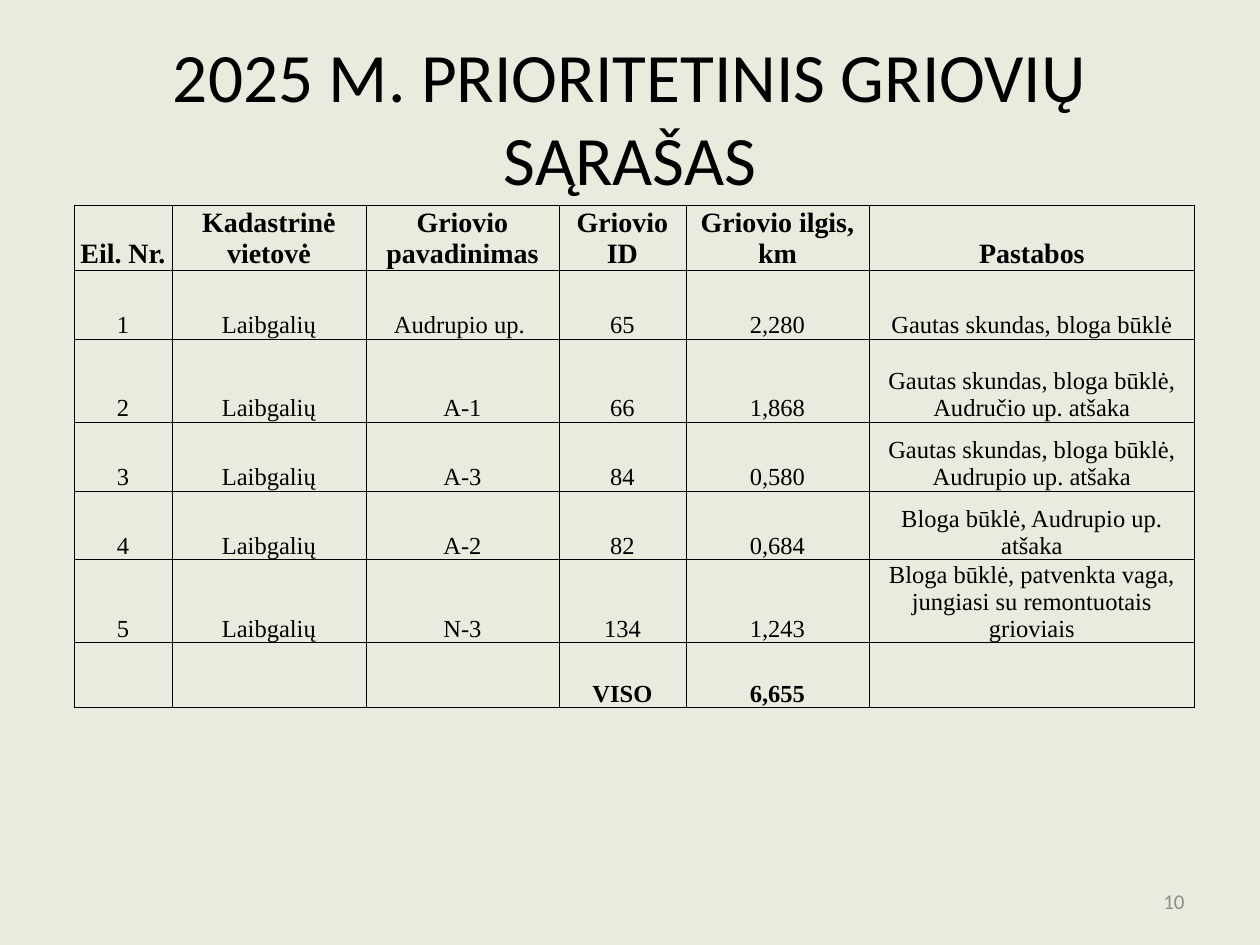
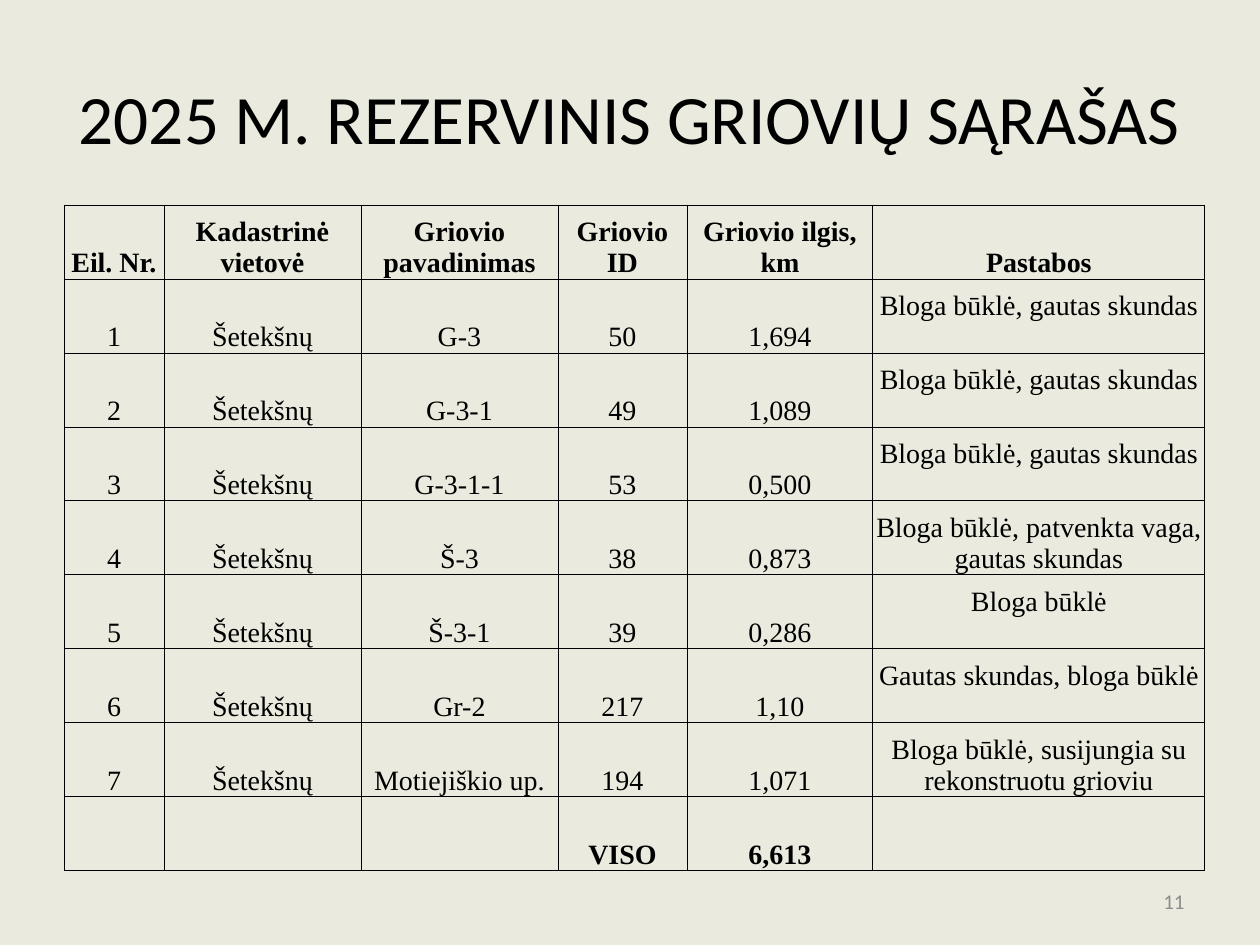
from lxml import etree
from pptx import Presentation
from pptx.dml.color import RGBColor
from pptx.enum.text import MSO_ANCHOR, PP_ALIGN
from pptx.oxml.ns import qn
from pptx.util import Pt

# Content
HEADERS = ["Eil. Nr.", "Kadastrinė vietovė", "Griovio pavadinimas",
           "Griovio ID", "Griovio ilgis, km", "Pastabos"]
COMPLAINT = "Bloga būklė, gautas skundas"
PAGES = [
    {
        "title": "2025 M. PRIORITETINIS GRIOVIŲ SĄRAŠAS",
        "number": "10",
        "place": "Laibgalių",
        "ditches": [  # name, ID, length, remarks
            ("Audrupio up. ", "65", "2,280", "Gautas skundas, bloga būklė"),
            ("A-1", "66", "1,868", "Gautas skundas, bloga būklė, Audručio up. atšaka"),
            ("A-3", "84", "0,580", "Gautas skundas, bloga būklė, Audrupio up. atšaka"),
            ("A-2", "82", "0,684", "Bloga būklė, Audrupio up. atšaka"),
            ("N-3", "134", "1,243",
             "Bloga būklė, patvenkta vaga, jungiasi su remontuotais grioviais"),
        ],
        "total": "6,655",
        "left": 74,
        "columns": [98, 194, 193, 127, 183, 326],
        "rows": [65, 69, 83, 69, 69, 83, 65],
        "body_size": 14,
        "raised_remarks": [],
    },
    {
        "title": "2025 M. REZERVINIS GRIOVIŲ SĄRAŠAS",
        "number": "11",
        "place": "Šetekšnų",
        "ditches": [
            ("G-3", "50", "1,694", COMPLAINT),
            ("G-3-1", "49", "1,089", COMPLAINT),
            ("G-3-1-1", "53", "0,500", COMPLAINT),
            ("Š-3", "38", "0,873", "Bloga būklė, patvenkta vaga, gautas skundas"),
            ("Š-3-1", "39", "0,286", "Bloga būklė"),
            ("Gr-2", "217", "1,10", "Gautas skundas, bloga būklė"),
            ("Motiejiškio up.", "194", "1,071",
             "Bloga būklė, susijungia su rekonstruotu grioviu"),
        ],
        "total": "6,613",
        "left": 64,
        "columns": [100, 197, 197, 129, 186, 332],
        "rows": [74] * 9,  # ends above the page number
        "body_size": 16,
        "raised_remarks": [1, 2, 3, 5, 6],  # rows whose remark sits one line higher
    },
]

# Shared style
BACKGROUND = RGBColor(0xEA, 0xEB, 0xDE)
BLACK = RGBColor(0, 0, 0)
GREY = RGBColor(0x8C, 0x8C, 0x8C)
TITLE_FONT = "Calibri"
TABLE_FONT = "Times New Roman"
TITLE_SIZE, HEADER_SIZE, NUMBER_SIZE = 39.6, 16, 12
CENTER, RIGHT = PP_ALIGN.CENTER, PP_ALIGN.RIGHT
MIDDLE, BOTTOM = MSO_ANCHOR.MIDDLE, MSO_ANCHOR.BOTTOM
TITLE_ONLY = 5

# Geometry in px
EMU_PER_PX = 914400 / 126
PAGE_SIZE = (1260, 945)
TITLE_AREA = (63, 38, 1134, 157)
NUMBER_AREA = (903, 876, 294, 50)
TABLE_TOP = 205
CELL_MARGIN = 1
REMARK_LIFT = 31


def px(length):
    return round(length * EMU_PER_PX)


def move(shape, area):
    shape.left, shape.top, shape.width, shape.height = map(px, area)


def write(frame, text, font, size, color, align, anchor, bold=False):
    frame.word_wrap = True
    frame.vertical_anchor = anchor
    para = frame.paragraphs[0]
    para.alignment = align
    span = para.add_run()
    span.text = text
    span.font.name = font
    span.font.size = Pt(size)
    span.font.bold = bold
    span.font.color.rgb = color


def draw_borders(cell):
    properties = cell._tc.get_or_add_tcPr()
    for side in ("lnL", "lnR", "lnT", "lnB"):
        line = etree.SubElement(properties, qn(f"a:{side}"), w=str(Pt(0.5)))
        fill = etree.SubElement(line, qn("a:solidFill"))
        etree.SubElement(fill, qn("a:srgbClr"), val=str(BLACK))


def table_rows(page):
    body = [(str(index), page["place"], *ditch)
            for index, ditch in enumerate(page["ditches"], start=1)]
    return [HEADERS, *body, ("", "", "", "VISO", page["total"], "")]


def add_ditch_table(slide, page):
    rows = table_rows(page)
    columns, heights = page["columns"], page["rows"]
    area = (page["left"], TABLE_TOP, sum(columns), sum(heights))
    table = slide.shapes.add_table(len(rows), len(columns), *map(px, area)).table
    table.horz_banding = False
    for column, width in zip(table.columns, columns):
        column.width = px(width)
    for row, height in zip(table.rows, heights):
        row.height = px(height)

    last_row, remarks = len(rows) - 1, len(columns) - 1
    for r, values in enumerate(rows):
        for c, value in enumerate(values):
            cell = table.cell(r, c)
            draw_borders(cell)
            cell.fill.background()
            cell.margin_left = cell.margin_right = cell.margin_top = px(CELL_MARGIN)
            raised = c == remarks and r in page["raised_remarks"]
            cell.margin_bottom = px(REMARK_LIFT if raised else 0)
            if value:
                size = HEADER_SIZE if r == 0 else page["body_size"]
                write(cell.text_frame, value, TABLE_FONT, size, BLACK, CENTER,
                      BOTTOM, bold=r in (0, last_row))
                cell.vertical_anchor = BOTTOM


def add_page(deck, page):
    slide = deck.slides.add_slide(deck.slide_layouts[TITLE_ONLY])
    title = slide.shapes.title
    move(title, TITLE_AREA)
    write(title.text_frame, page["title"], TITLE_FONT, TITLE_SIZE, BLACK, CENTER, MIDDLE)
    add_ditch_table(slide, page)
    number = slide.shapes.add_textbox(*map(px, NUMBER_AREA))
    write(number.text_frame, page["number"], TITLE_FONT, NUMBER_SIZE, GREY, RIGHT, MIDDLE)


def main():
    deck = Presentation()
    deck.slide_width, deck.slide_height = map(px, PAGE_SIZE)
    background = deck.slide_master.background.fill
    background.solid()
    background.fore_color.rgb = BACKGROUND
    for page in PAGES:
        add_page(deck, page)
    deck.save("out.pptx")


if __name__ == "__main__":
    main()
